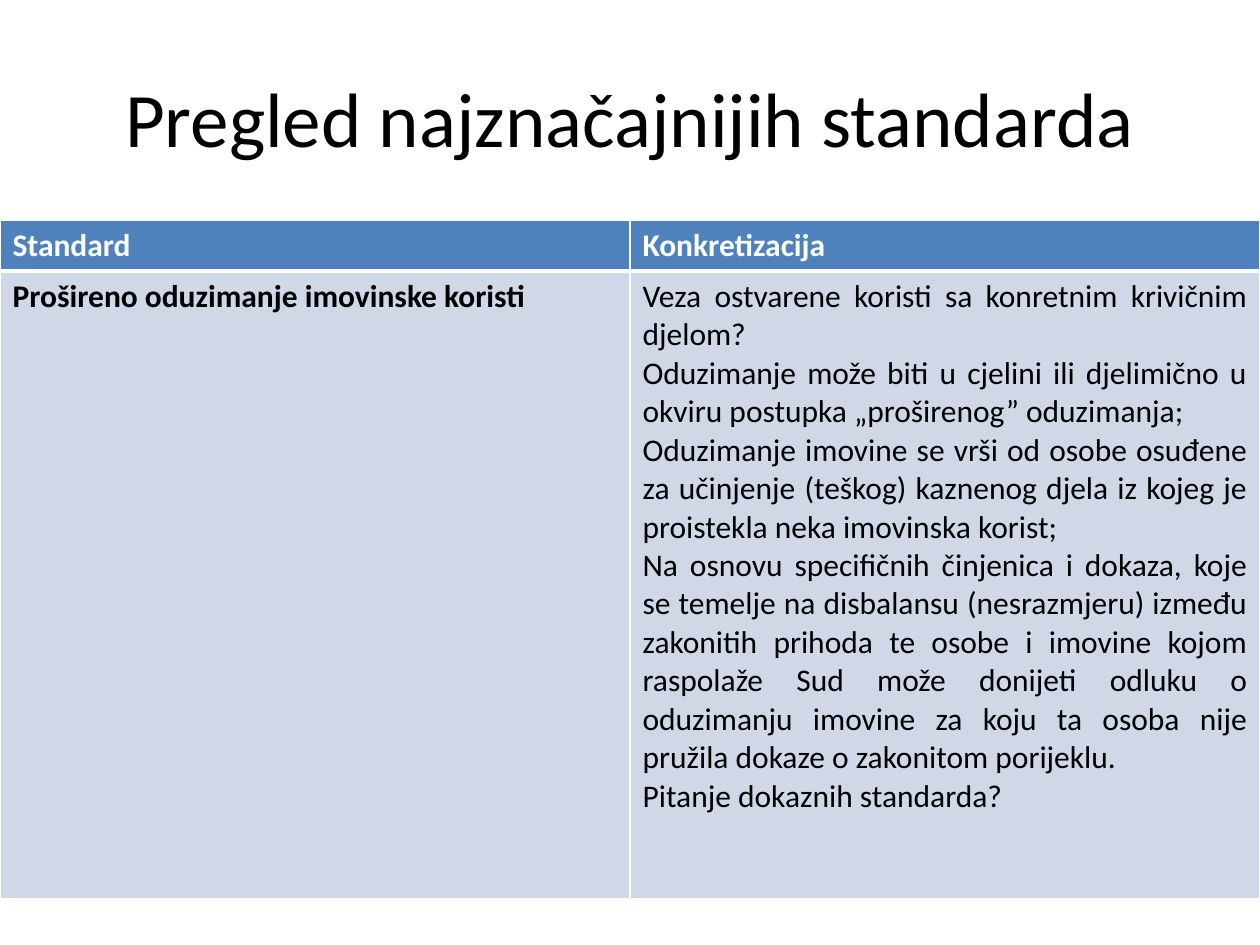
from lxml.etree import SubElement
from pptx import Presentation
from pptx.dml.color import RGBColor
from pptx.enum.text import MSO_ANCHOR, PP_ALIGN
from pptx.oxml.ns import qn
from pptx.util import Emu, Pt

SCALE = 914400 / 126  # EMU in one px
FONT = "Calibri"
BLACK = RGBColor(0x00, 0x00, 0x00)
WHITE = RGBColor(0xFF, 0xFF, 0xFF)
HEADER_BLUE = RGBColor(0x4F, 0x81, 0xBD)
BODY_BLUE = RGBColor(0xD0, 0xD8, 0xE8)

HEADINGS = ["Standard", "Konkretizacija"]
STANDARD = "Prošireno oduzimanje imovinske koristi"
DETAILS = [
    "Veza ostvarene koristi sa konretnim krivičnim djelom?",
    "Oduzimanje može biti u cjelini ili djelimično u okviru postupka "
    "„proširenog” oduzimanja;",
    "Oduzimanje imovine se vrši od osobe osuđene za učinjenje (teškog) "
    "kaznenog djela iz kojeg je proistekla neka imovinska korist;",
    "Na osnovu specifičnih činjenica i dokaza, koje se temelje na disbalansu "
    "(nesrazmjeru) između zakonitih prihoda te osobe i imovine kojom raspolaže "
    "Sud može donijeti odluku o oduzimanju imovine za koju ta osoba nije "
    "pružila dokaze o zakonitom porijeklu.",
    "Pitanje dokaznih standarda?",
]


def px(length):
    return Emu(round(length * SCALE))


def write_text(text_frame, *lines, size=18, color=BLACK, bold=False, align=PP_ALIGN.LEFT):
    for index, line in enumerate(lines):
        paragraph = text_frame.add_paragraph() if index else text_frame.paragraphs[0]
        paragraph.alignment = align
        run = paragraph.add_run()
        run.text = line
        run.font.name = FONT
        run.font.size = Pt(size)
        run.font.bold = bold
        run.font.color.rgb = color


def format_cell(cell, fill, top=1, bottom=1):
    properties = cell._tc.get_or_add_tcPr()
    # Borders come before the fill in the cell properties
    for side, width in (("L", 1), ("R", 1), ("T", top), ("B", bottom)):
        line = SubElement(properties, qn(f"a:ln{side}"), w=str(Pt(width)))
        solid = SubElement(line, qn("a:solidFill"))
        SubElement(solid, qn("a:srgbClr"), val=str(WHITE))
    cell.fill.solid()
    cell.fill.fore_color.rgb = fill


def place_title(slide, left, top, width, height):
    title = slide.shapes.title
    title.left, title.top = px(left), px(top)
    title.width, title.height = px(width), px(height)
    title.text_frame.vertical_anchor = MSO_ANCHOR.MIDDLE
    write_text(title.text_frame, "Pregled najznačajnijih standarda",
               size=44, align=PP_ALIGN.CENTER)


def place_table(slide, left, top, width, height, header_height):
    table = slide.shapes.add_table(2, 2, px(left), px(top), px(width), px(height)).table
    for column in table.columns:
        column.width = px(width / 2)
    table.rows[0].height = px(header_height)
    table.rows[1].height = px(height - header_height)

    # Header row, with a thick rule below it
    for index, heading in enumerate(HEADINGS):
        cell = table.cell(0, index)
        format_cell(cell, HEADER_BLUE, bottom=3)
        write_text(cell.text_frame, heading, color=WHITE, bold=True)
        format_cell(table.cell(1, index), BODY_BLUE, top=3)

    # Body row
    write_text(table.cell(1, 0).text_frame, STANDARD, bold=True)
    write_text(table.cell(1, 1).text_frame, *DETAILS, align=PP_ALIGN.JUSTIFY)


def main():
    presentation = Presentation()
    presentation.slide_width, presentation.slide_height = px(1260), px(945)
    slide = presentation.slides.add_slide(presentation.slide_layouts[5])
    place_title(slide, 63, 38, 1134, 158)
    place_table(slide, 0, 220, 1260, 679, header_height=51)
    presentation.save("out.pptx")


if __name__ == "__main__":
    main()
